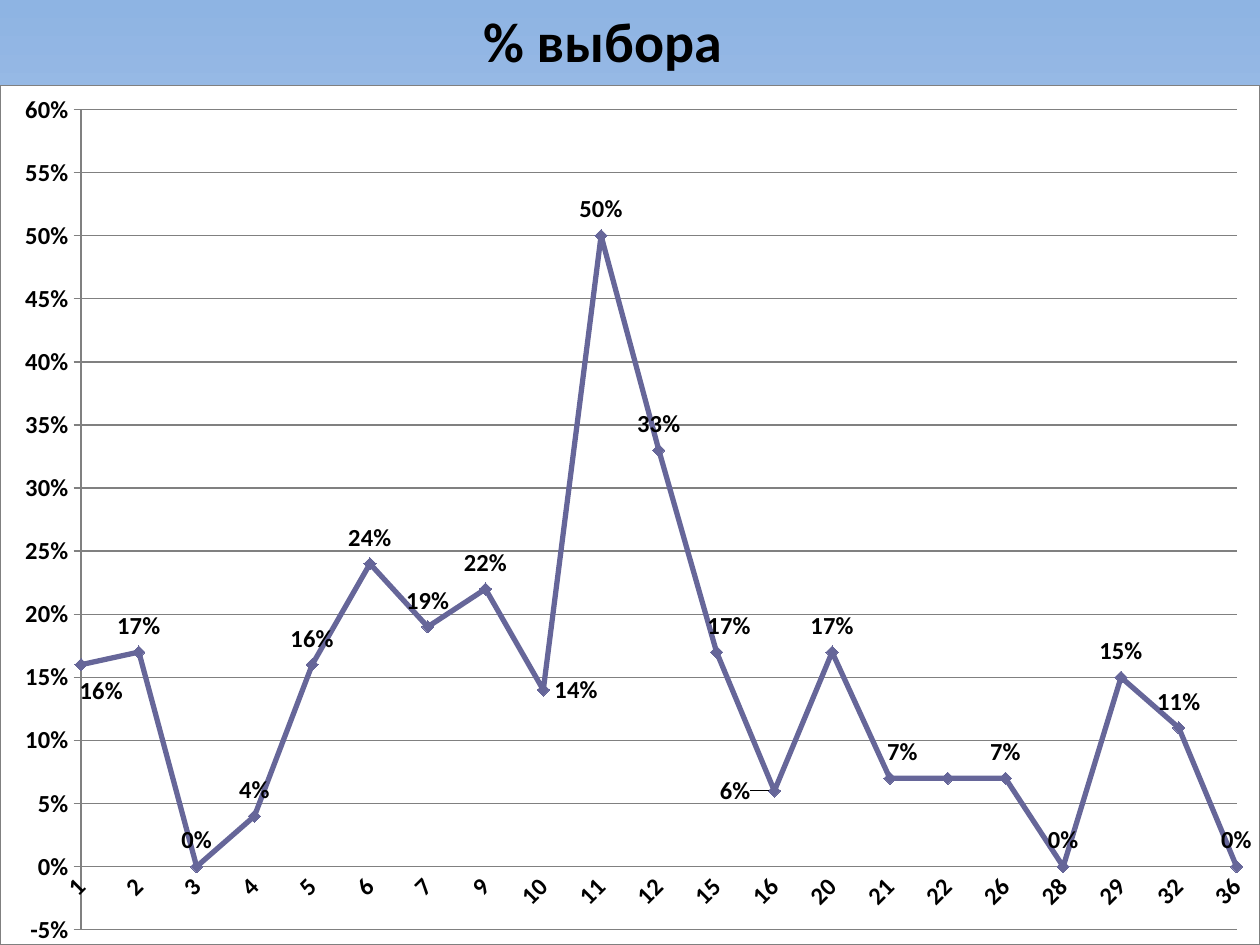
from copy import deepcopy
from lxml import etree
from pptx import Presentation
from pptx.chart.data import CategoryChartData
from pptx.dml.color import RGBColor
from pptx.enum import chart as ec, text
from pptx.oxml import parse_xml
from pptx.oxml.ns import qn, nsdecls
from pptx.util import Cm, Pt

TITLE = "% выбора"
DATA = [
    ("1", 0.16), ("2", 0.17), ("3", None), ("4", 0.04), ("5", 0.16), ("6", 0.24), ("7", 0.19),
    ("9", 0.22), ("10", 0.14), ("11", 0.5), ("12", 0.33), ("15", 0.17), ("16", 0.06),
    ("20", 0.17), ("21", 0.07), ("22", 0.07), ("26", 0.07), ("28", None), ("29", 0.15),
    ("32", 0.11), ("36", None),
]
POS = ec.XL_LABEL_POSITION
MOVED = {"1": POS.RIGHT, "10": POS.RIGHT, "16": POS.LEFT}
NUDGED = {"1": (-0.01, 0.03), "15": (0.01, 0), "16": (-0.01, 0), "21": (0.01, 0)}
HIDDEN = ["22"]
THEME = {
    "font": "Calibri", "ink": "000000", "grey": "808080", "line": "666699", "paper": "FFFFFF",
    "sky": [(0, "8EB4E3"), (0.5, "C2D1ED"), (1, "E1E8F5")],
    "head": 32, "label": 14, "base": 10,
}


def color(name):
    return RGBColor.from_string(THEME[name])


def style(font, size, bold=True):
    font.name, font.size, font.bold = THEME["font"], Pt(THEME[size]), bold
    font.color.rgb = color("ink")


def stroke(line, name, width):
    line.color.rgb = color(name)
    line.width = Pt(width)


def layout(x, y, extra=""):
    return parse_xml(
        f'<c:layout {nsdecls("c")}><c:manualLayout>{extra}'
        f'<c:x val="{x}"/><c:y val="{y}"/></c:manualLayout></c:layout>')


def panel(border):
    edge = f'<a:ln w="0"><a:solidFill><a:srgbClr val="{THEME["grey"]}"/></a:solidFill></a:ln>'
    none = "<a:ln><a:noFill/></a:ln>"
    return parse_xml(
        f'<c:spPr {nsdecls("c", "a")}><a:solidFill><a:srgbClr val="{THEME["paper"]}"/>'
        f'</a:solidFill>{edge if border else none}</c:spPr>')


def paint(slide):
    fill = slide.background.fill
    fill.gradient()
    fill.gradient_angle = 270
    stops = slide.background._cSld.find(".//" + qn("a:gsLst"))
    stops.insert(1, deepcopy(stops[0]))
    for stop, (place, rgb) in zip(fill.gradient_stops, THEME["sky"]):
        stop.position = place
        stop.color.rgb = RGBColor.from_string(rgb)


def head(slide):
    box = slide.shapes.title
    box.left, box.top, box.width, box.height = Cm(9.47), Cm(0), Cm(5.36), Cm(1.63)
    frame = box.text_frame
    frame.text = TITLE
    frame.word_wrap = False
    frame.auto_size = text.MSO_AUTO_SIZE.NONE
    frame.vertical_anchor = text.MSO_ANCHOR.MIDDLE
    para = frame.paragraphs[0]
    para.alignment = text.PP_ALIGN.CENTER
    style(para.runs[0].font, "head")


def axes(chart):
    cat, val = chart.category_axis, chart.value_axis
    for axis in (cat, val):
        style(axis.tick_labels.font, "label")
        stroke(axis.format.line, "grey", 0)
        axis.minor_tick_mark = ec.XL_TICK_MARK.NONE
    cat.major_tick_mark = ec.XL_TICK_MARK.NONE
    cat._element.find(".//" + qn("a:bodyPr")).set("rot", "-2700000")
    val.major_tick_mark = ec.XL_TICK_MARK.CROSS
    val.minimum_scale, val.maximum_scale, val.major_unit = -0.05, 0.6, 0.05
    val.tick_labels.number_format = "0%"
    val.tick_labels.number_format_is_linked = False
    val.has_major_gridlines = True
    stroke(val.major_gridlines.format.line, "grey", 0)
    root = val._element
    cross = root.find(qn("c:crossBetween"))
    if cross is None:
        cross = etree.Element(qn("c:crossBetween"))
        root.find(qn("c:crosses")).addnext(cross)
    cross.set("val", "midCat")


def labels(row):
    tags = row.data_labels
    tags.show_value = True
    tags.position = POS.ABOVE
    tags.number_format = "0%"
    tags.number_format_is_linked = False
    style(tags.font, "label")
    for i, (name, _) in enumerate(DATA):
        if name not in (*MOVED, *NUDGED, *HIDDEN):
            continue
        tag = row.points[i].data_label
        style(tag.font, "label")
        tag.position = MOVED.get(name, POS.ABOVE)
        node = next(d for d in tags._element.findall(qn("c:dLbl"))
                    if d.find(qn("c:idx")).get("val") == str(i))
        if name in NUDGED:
            node.insert(1, layout(*NUDGED[name]))
        if name in HIDDEN:
            for part in list(node)[1:]:
                node.remove(part)
            etree.SubElement(node, qn("c:delete")).set("val", "1")


def graph(slide):
    data = CategoryChartData(number_format="0%")
    data.categories = [name for name, _ in DATA]
    data.add_series("Series 1", [value for _, value in DATA])
    chart = slide.shapes.add_chart(
        ec.XL_CHART_TYPE.LINE_MARKERS_STACKED, Cm(0), Cm(1.73), Cm(25.4), Cm(17.32), data).chart
    chart.has_legend = chart.has_title = False
    style(chart.font, "base", False)
    axes(chart)
    plot = chart.plots[0]
    plot.vary_by_categories = False
    row = plot.series[0]
    row.smooth = False
    stroke(row.format.line, "line", 3)
    mark = row.marker
    mark.style, mark.size = ec.XL_MARKER_STYLE.DIAMOND, 7
    mark.format.fill.solid()
    mark.format.fill.fore_color.rgb = color("line")
    mark.format.line.color.rgb = color("line")
    labels(row)
    space = chart._chartSpace
    for blank in space.iter(qn("c:dispBlanksAs")):
        blank.set("val", "zero")
    space.find(qn("c:chart")).addnext(panel(True))
    area = space.find(".//" + qn("c:plotArea"))
    for old in area.findall(qn("c:layout")):
        area.remove(old)
    place = layout(0.02, 0.01, '<c:layoutTarget val="outer"/>'
                   '<c:xMode val="edge"/><c:yMode val="edge"/>')
    for key, size in (("c:w", "0.97"), ("c:h", "0.99")):
        etree.SubElement(place[0], qn(key)).set("val", size)
    area.insert(0, place)
    area.append(panel(False))


def main():
    deck = Presentation()
    deck.slide_width, deck.slide_height = Cm(25.4), Cm(19.05)
    slide = deck.slides.add_slide(deck.slide_layouts[5])
    paint(slide)
    head(slide)
    graph(slide)
    deck.save("out.pptx")


if __name__ == "__main__":
    main()
